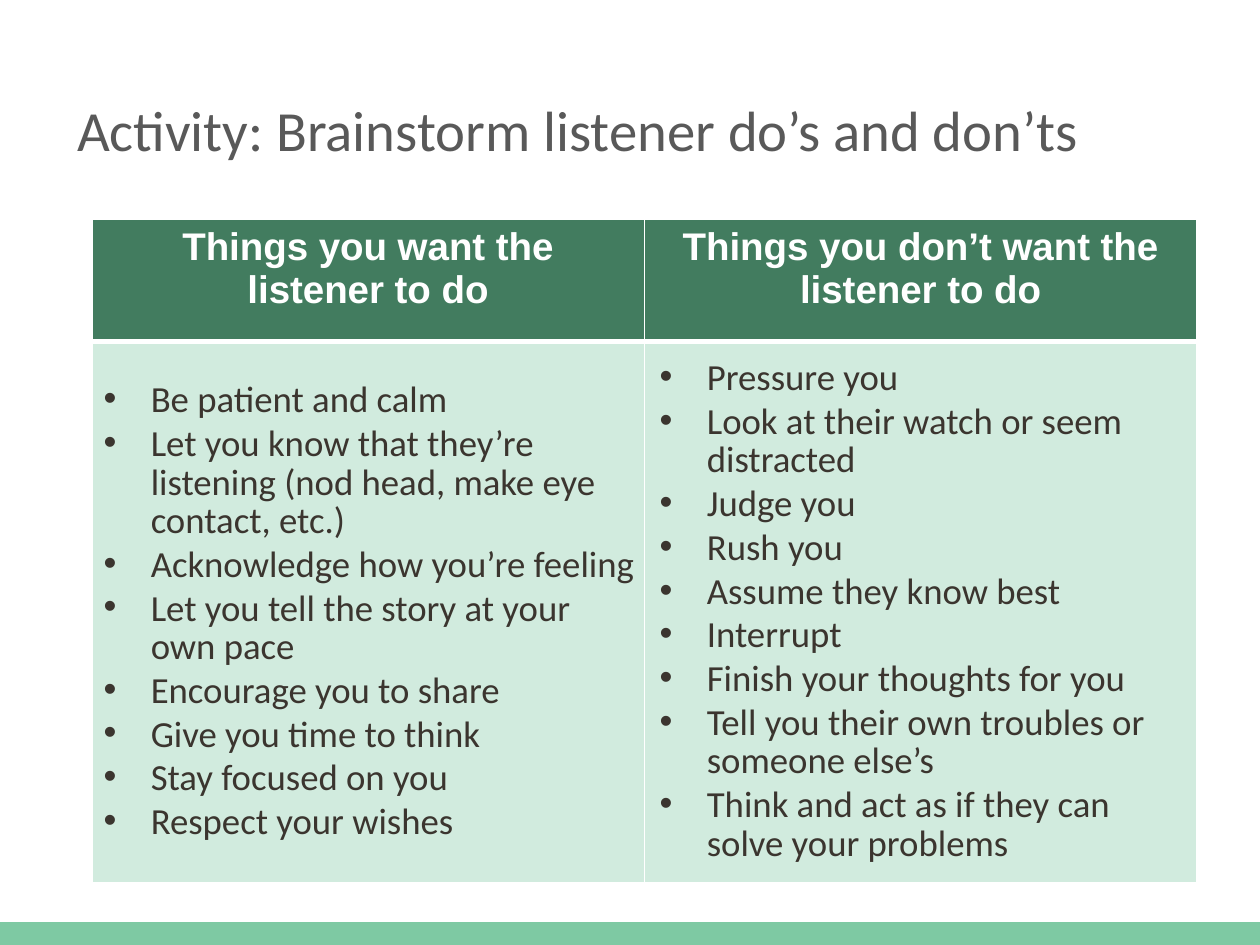
from lxml import etree
from pptx import Presentation
from pptx.dml.color import RGBColor
from pptx.enum.shapes import MSO_SHAPE
from pptx.enum.text import MSO_ANCHOR, MSO_AUTO_SIZE, PP_ALIGN
from pptx.oxml.ns import qn
from pptx.util import Cm, Pt

RECTANGLE = MSO_SHAPE.RECTANGLE
MIDDLE = MSO_ANCHOR.MIDDLE
NO_AUTOFIT = MSO_AUTO_SIZE.NONE
LEFT, CENTER = PP_ALIGN.LEFT, PP_ALIGN.CENTER

WHITE = RGBColor(0xFF, 0xFF, 0xFF)
TITLE_GRAY = RGBColor(0x59, 0x59, 0x59)
TEXT_BROWN = RGBColor(0x3B, 0x35, 0x2F)
HEADER_GREEN = RGBColor(0x42, 0x7C, 0x5F)
BODY_GREEN = RGBColor(0xD1, 0xEB, 0xDE)
FOOTER_GREEN = RGBColor(0x7E, 0xC9, 0xA3)

TITLE = "Activity: Brainstorm listener do’s and don’ts"
HEADERS = ["Things you want the\vlistener to do", "Things you don’t want the listener to do"]
DOS = [
    "Be patient and calm",
    "Let you know that they’re listening (nod head, make eye contact, etc.)",
    "Acknowledge how you’re feeling",
    "Let you tell the story at your own pace",
    "Encourage you to share",
    "Give you time to think",
    "Stay focused on you",
    "Respect your wishes",
]
DONTS = [
    "Pressure you",
    "Look at their watch or seem distracted",
    "Judge you",
    "Rush you",
    "Assume they know best",
    "Interrupt",
    "Finish your thoughts for you",
    "Tell you their own troubles or someone else’s",
    "Think and act as if they can solve your problems",
]


def format_runs(paragraph, name, size, color, bold=False):
    """Apply one font to every run of a paragraph."""
    for run in paragraph.runs:
        run.font.name = name
        run.font.size = Pt(size)
        run.font.color.rgb = color
        run.font.bold = bold


def add_footer_bar(slide, left, top, width, height):
    """Draw the plain green bar along the foot of the slide."""
    bar = slide.shapes.add_shape(RECTANGLE, left, top, width, height)
    bar.shadow.inherit = False
    bar.fill.solid()
    bar.fill.fore_color.rgb = FOOTER_GREEN
    bar.line.fill.background()


def place_title(slide, left, top, width, height):
    """Fill and position the title placeholder."""
    title = slide.shapes.title
    title.left, title.top, title.width, title.height = left, top, width, height
    text_frame = title.text_frame
    text_frame.text = TITLE
    text_frame.auto_size = NO_AUTOFIT
    text_frame.vertical_anchor = MIDDLE
    paragraph = text_frame.paragraphs[0]
    paragraph.alignment = LEFT
    format_runs(paragraph, "Calibri", 32.4, TITLE_GRAY)


def style_cell(cell, color, top_width, bottom_width):
    """Give a cell white borders and a solid fill."""
    properties = cell._tc.get_or_add_tcPr()
    widths = {"a:lnL": 1, "a:lnR": 1, "a:lnT": top_width, "a:lnB": bottom_width}
    for tag, width in widths.items():
        line = etree.SubElement(properties, qn(tag), w=str(Pt(width)))
        fill = etree.SubElement(line, qn("a:solidFill"))
        etree.SubElement(fill, qn("a:srgbClr"), val=str(WHITE))
    cell.fill.solid()
    cell.fill.fore_color.rgb = color


def add_comparison_table(slide, left, top, width, header_height, body_height):
    """Add the two-column table with its headings and empty body row."""
    frame = slide.shapes.add_table(2, len(HEADERS), left, top, width, header_height + body_height)
    table = frame.table
    table.rows[0].height = header_height
    table.rows[1].height = body_height
    for index, header in enumerate(HEADERS):
        table.columns[index].width = width // len(HEADERS)
        header_cell = table.cell(0, index)
        style_cell(header_cell, HEADER_GREEN, 1, 3)
        style_cell(table.cell(1, index), BODY_GREEN, 3, 1)
        header_cell.text_frame.text = header
        paragraph = header_cell.text_frame.paragraphs[0]
        paragraph.alignment = CENTER
        format_runs(paragraph, "Arial", 22, WHITE, bold=True)


def add_bullet_list(slide, items, left, top, width, height, bottom_margin=Cm(0.13)):
    """Add a vertically centred list of bullets."""
    text_frame = slide.shapes.add_textbox(left, top, width, height).text_frame
    text_frame.word_wrap = True
    text_frame.vertical_anchor = MIDDLE
    text_frame.margin_left = text_frame.margin_right = Cm(0.24)
    text_frame.margin_bottom = bottom_margin
    text_frame.text = "\n".join(items)
    for paragraph in text_frame.paragraphs:
        paragraph.line_spacing = Pt(22)
        paragraph.space_after = Pt(3)
        format_runs(paragraph, "Calibri", 21, TEXT_BROWN)
        properties = paragraph._p.get_or_add_pPr()
        properties.set("marL", str(Cm(0.95)))
        properties.set("indent", str(-Cm(0.95)))
        etree.SubElement(properties, qn("a:buFont"), typeface="Arial")
        etree.SubElement(properties, qn("a:buChar"), char="•")


def main():
    """Build and save the listener activity slide."""
    presentation = Presentation()
    presentation.slide_width, presentation.slide_height = Cm(25.4), Cm(19.05)
    slide = presentation.slides.add_slide(presentation.slide_layouts[5])
    add_footer_bar(slide, Cm(0), Cm(18.59), Cm(25.53), Cm(0.53))
    place_title(slide, Cm(1.3), Cm(1.25), Cm(22.83), Cm(2.69))
    add_comparison_table(slide, Cm(1.85), Cm(4.42), Cm(22.28), Cm(2.46), Cm(10.92))
    add_bullet_list(slide, DOS, Cm(1.85), Cm(7.29), Cm(11.2), Cm(11), bottom_margin=Cm(1.04))
    add_bullet_list(slide, DONTS, Cm(13.06), Cm(6.83), Cm(11.07), Cm(11))
    presentation.save("out.pptx")


if __name__ == "__main__":
    main()
